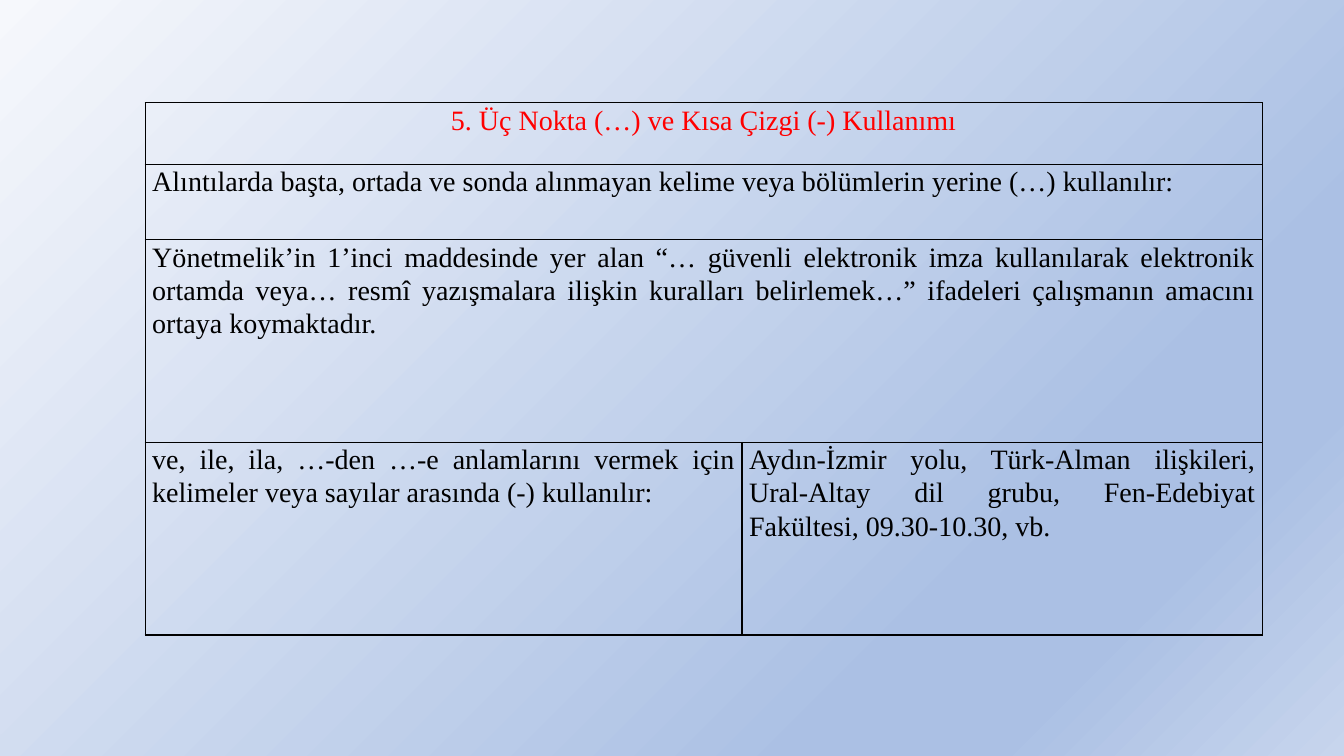
from lxml import etree
from pptx import Presentation
from pptx.dml.color import RGBColor
from pptx.enum.text import PP_ALIGN as Align
from pptx.oxml.ns import qn
from pptx.util import Inches, Pt

RED = RGBColor(0xFF, 0x00, 0x00)
BLACK = RGBColor(0x00, 0x00, 0x00)
PALE = RGBColor(0xF6, 0xF8, 0xFC)
BLUE = RGBColor(0xAB, 0xC0, 0xE4)
SOFT = RGBColor(0xC7, 0xD5, 0xED)
STOPS = [(0, PALE), (74, BLUE), (83, BLUE), (100, SOFT)]

FONT = "Times New Roman"
COLS = [5.92, 5.16]
ROWS = [0.61, 0.75, 2.01, 1.91]
HEAD = "5. Üç Nokta (…) ve Kısa Çizgi (-) Kullanımı"
RULES = [
    ["Alıntılarda başta, ortada ve sonda alınmayan kelime veya bölümlerin "
     "yerine (…) kullanılır:"],
    ["Yönetmelik’in 1’inci maddesinde yer alan “… güvenli elektronik imza "
     "kullanılarak elektronik ortamda veya… resmî yazışmalara ilişkin "
     "kuralları belirlemek…” ifadeleri çalışmanın amacını ortaya "
     "koymaktadır."],
    ["ve, ile, ila, …-den …-e anlamlarını vermek için kelimeler veya sayılar "
     "arasında (-) kullanılır:",
     "Aydın-İzmir yolu, Türk-Alman ilişkileri, Ural-Altay dil grubu, "
     "Fen-Edebiyat Fakültesi, 09.30-10.30, vb."],
]


def add_node(parent, tag, **attrs):
    return etree.SubElement(parent, qn(tag), **attrs)


def paint_back(slide):
    fill = slide.background.fill
    fill.gradient()
    fill.gradient_angle = 315
    stops = slide.element.xpath(".//a:gsLst")[0]
    stops.clear()
    for pos, color in STOPS:
        stop = add_node(stops, "a:gs", pos=str(pos * 1000))
        add_node(stop, "a:srgbClr", val=str(color))


def frame_cell(cell):
    """Draw a thin black line on all four sides and leave the cell clear."""
    props = cell._tc.get_or_add_tcPr()
    for side in "LRTB":
        line = add_node(props, f"a:ln{side}", w=str(Pt(1)))
        fill = add_node(line, "a:solidFill")
        add_node(fill, "a:srgbClr", val=str(BLACK))
    cell.fill.background()


def put_text(cell, text, color=BLACK, align=Align.JUSTIFY, size=20):
    cell.margin_left = cell.margin_right = Inches(0.07)
    cell.margin_top = cell.margin_bottom = 0
    para = cell.text_frame.paragraphs[0]
    para.alignment = align
    para.line_spacing = 1.07
    para.space_after = Pt(8)
    run = para.add_run()
    run.text = text
    run.font.name = FONT
    run.font.size = Pt(size)
    run.font.color.rgb = color


def add_grid(slide):
    frame = slide.shapes.add_table(
        len(ROWS), len(COLS), Inches(1.44), Inches(1.02),
        Inches(sum(COLS)), Inches(sum(ROWS)))
    table = frame.table
    table.first_row = table.horz_banding = False
    for col, width in zip(table.columns, COLS):
        col.width = Inches(width)
    for row, height in zip(table.rows, ROWS):
        row.height = Inches(height)
    for cell in table.iter_cells():
        frame_cell(cell)
    return table


def main():
    deck = Presentation()
    deck.slide_width, deck.slide_height = Inches(13.33), Inches(7.5)
    slide = deck.slides.add_slide(deck.slide_layouts[6])
    paint_back(slide)
    table = add_grid(slide)
    for row in range(len(ROWS) - 1):
        table.cell(row, 0).merge(table.cell(row, 1))
    put_text(table.cell(0, 0), HEAD, color=RED, align=Align.CENTER)
    for row, texts in enumerate(RULES, 1):
        for col, text in enumerate(texts):
            put_text(table.cell(row, col), text)
    deck.save("out.pptx")


if __name__ == "__main__":
    main()
